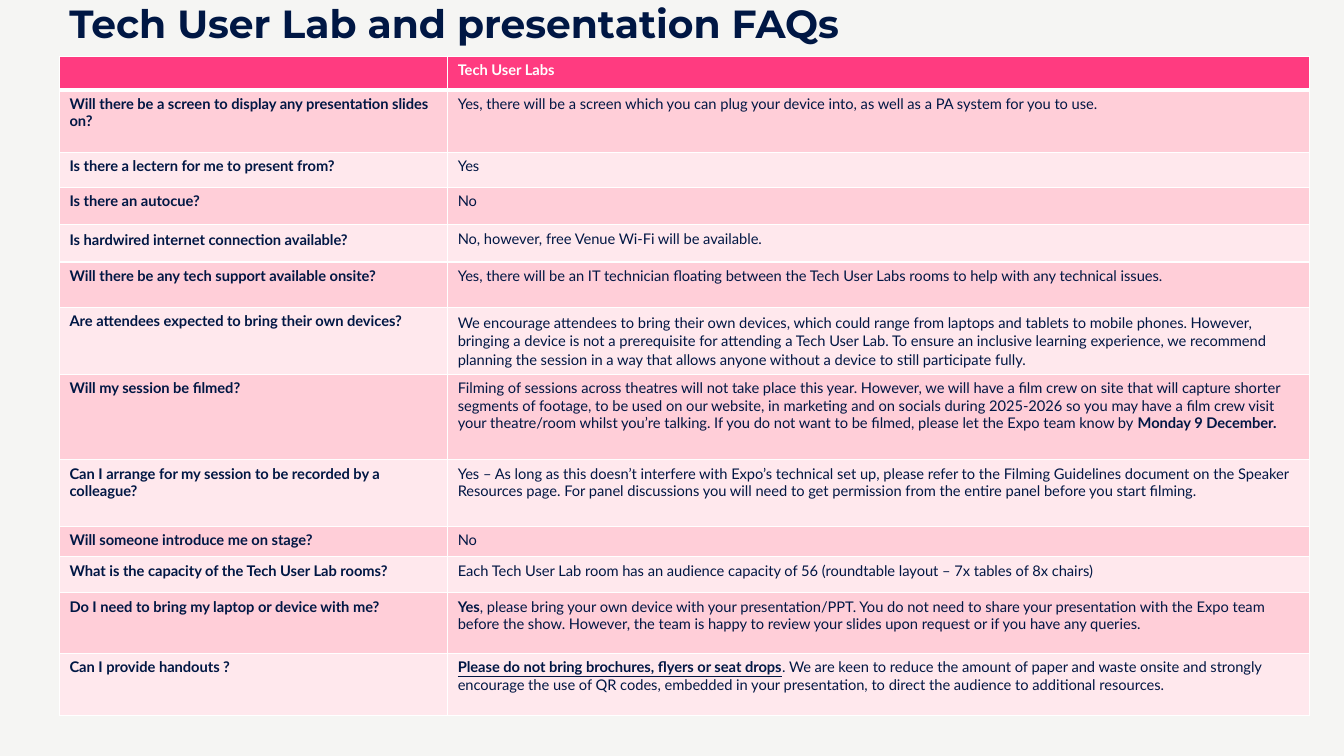
from dataclasses import dataclass

from lxml.etree import SubElement
from pptx import Presentation
from pptx.dml.color import RGBColor as Color
from pptx.oxml.ns import qn
from pptx.util import Inches, Pt


@dataclass
class Theme:
    background: str = "F5F5F3"
    navy: str = "001744"
    white: str = "FFFFFF"
    header: str = "FF3B80"
    bands: tuple = ("FFCED8", "FFE8ED")
    title_font: str = "Montserrat"
    body_font: str = "Lato"
    title_size: float = 28
    body_size: float = 10.5


def style_run(run, font_name, size, color, bold):
    run.font.name = font_name
    run.font.size = Pt(size)
    run.font.color.rgb = Color.from_string(color)
    run.font.bold = bold


def style_cell(cell, fill, border_widths):
    properties = cell._tc.get_or_add_tcPr()
    for side, width in border_widths.items():
        line = SubElement(properties, qn(f"a:ln{side}"), w=str(Pt(width)))
        solid = SubElement(line, qn("a:solidFill"))
        SubElement(solid, qn("a:srgbClr"), val=theme.white)
    cell.fill.solid()
    cell.fill.fore_color.rgb = Color.from_string(fill)


theme = Theme()
PLAIN, BOLD, UNDERLINED = "plain", "bold", "underlined"

table_rows = [
    (0.33, "", [("Tech User Labs", BOLD)]),
    (0.62, "Will there be a screen to display any presentation slides on?",
     [("Yes, there will be a screen which you can plug your device into, as well as a PA system "
       "for you to use.", PLAIN)]),
    (0.35, "Is there a lectern for me to present from?", [("Yes", PLAIN)]),
    (0.37, "Is there an autocue?", [("No", PLAIN)]),
    (0.37, "Is hardwired internet connection available?",
     [("No, however, free Venue Wi-Fi will be available.", PLAIN)]),
    (0.45, "Will there be any tech support available onsite?",
     [("Yes, there will be an IT technician floating between the Tech User Labs rooms to help "
       "with any technical issues.", PLAIN)]),
    (0.66, "Are attendees expected to bring their own devices?",
     [("We encourage attendees to bring their own devices, which could range from laptops and "
       "tablets to mobile phones. However, bringing a device is not a prerequisite for attending "
       "a Tech User Lab. To ensure an inclusive learning experience, we recommend planning the "
       "session in a way that allows anyone without a device to still participate fully.", PLAIN)]),
    (0.85, "Will my session be filmed?",
     [("Filming of sessions across theatres will not take place this year. However, we will have "
       "a film crew on site that will capture shorter segments of footage, to be used on our "
       "website, in marketing and on socials during 2025-2026 so you may have a film crew visit "
       "your theatre/room whilst you’re talking. If you do not want to be filmed, please let the "
       "Expo team know by ", PLAIN),
      ("Monday 9 December.", BOLD)]),
    (0.66, "Can I arrange for my session to be recorded by a colleague?",
     [("Yes – As long as this doesn’t interfere with Expo’s technical set up, please refer to the "
       "Filming Guidelines document on the Speaker Resources page. For panel discussions you will "
       "need to get permission from the entire panel before you start filming.", PLAIN)]),
    (0.3, "Will someone introduce me on stage?", [("No", PLAIN)]),
    (0.36, "What is the capacity of the Tech User Lab rooms?",
     [("Each Tech User Lab room has an audience capacity of 56 (roundtable layout – 7x tables of "
       "8x chairs)", PLAIN)]),
    (0.6, "Do I need to bring my laptop or device with me?",
     [("Yes", BOLD),
      (", please bring your own device with your presentation/PPT. You do not need to share your "
       "presentation with the Expo team before the show. However, the team is happy to review "
       "your slides upon request or if you have any queries.", PLAIN)]),
    (0.62, "Can I provide handouts ?",
     [("Please do not bring brochures, flyers or seat drops", UNDERLINED),
      (". We are keen to reduce the amount of paper and waste onsite and strongly encourage the "
       "use of QR codes, embedded in your presentation, to direct the audience to additional "
       "resources.", PLAIN)]),
]
spaced_cells = {(4, 0), (6, 1)}

presentation = Presentation()
presentation.slide_width = Inches(13.33)
presentation.slide_height = Inches(7.5)
slide = presentation.slides.add_slide(presentation.slide_layouts[6])
slide.background.fill.solid()
slide.background.fill.fore_color.rgb = Color.from_string(theme.background)

faq_table = slide.shapes.add_table(
    len(table_rows), 2, Inches(0.59), Inches(0.56), Inches(12.4), Inches(6.54)).table
for column, width in zip(faq_table.columns, (3.85, 8.55)):
    column.width = Inches(width)

for row_index, (height, question, answer) in enumerate(table_rows):
    faq_table.rows[row_index].height = Inches(height)
    is_header = row_index == 0
    fill = theme.header if is_header else theme.bands[(row_index - 1) % 2]
    text_color = theme.white if is_header else theme.navy
    borders = {"L": 1, "R": 1, "T": 3 if row_index == 1 else 1, "B": 3 if is_header else 1}
    for column_index, pieces in enumerate(([(question, BOLD)], answer)):
        cell = faq_table.cell(row_index, column_index)
        style_cell(cell, fill, borders)
        paragraph = cell.text_frame.paragraphs[0]
        if (row_index, column_index) in spaced_cells:
            paragraph.line_spacing = 1.07
            paragraph.space_after = Pt(8)
        for text, emphasis in pieces:
            if not text:
                SubElement(paragraph._p, qn("a:endParaRPr"), sz=str(int(theme.body_size * 100)))
                continue
            run = paragraph.add_run()
            run.text = text
            style_run(run, theme.body_font, theme.body_size, text_color, emphasis != PLAIN)
            if emphasis == UNDERLINED:
                run.font.underline = True

title_box = slide.shapes.add_textbox(Inches(0.59), Inches(0), Inches(7.92), Inches(0.72))
title_box.text_frame.word_wrap = True
title_box.text_frame.text = "Tech User Lab and presentation FAQs"
title = title_box.text_frame.paragraphs[0]
title.line_spacing = 0.9
style_run(title.runs[0], theme.title_font, theme.title_size, theme.navy, True)

presentation.save("out.pptx")
